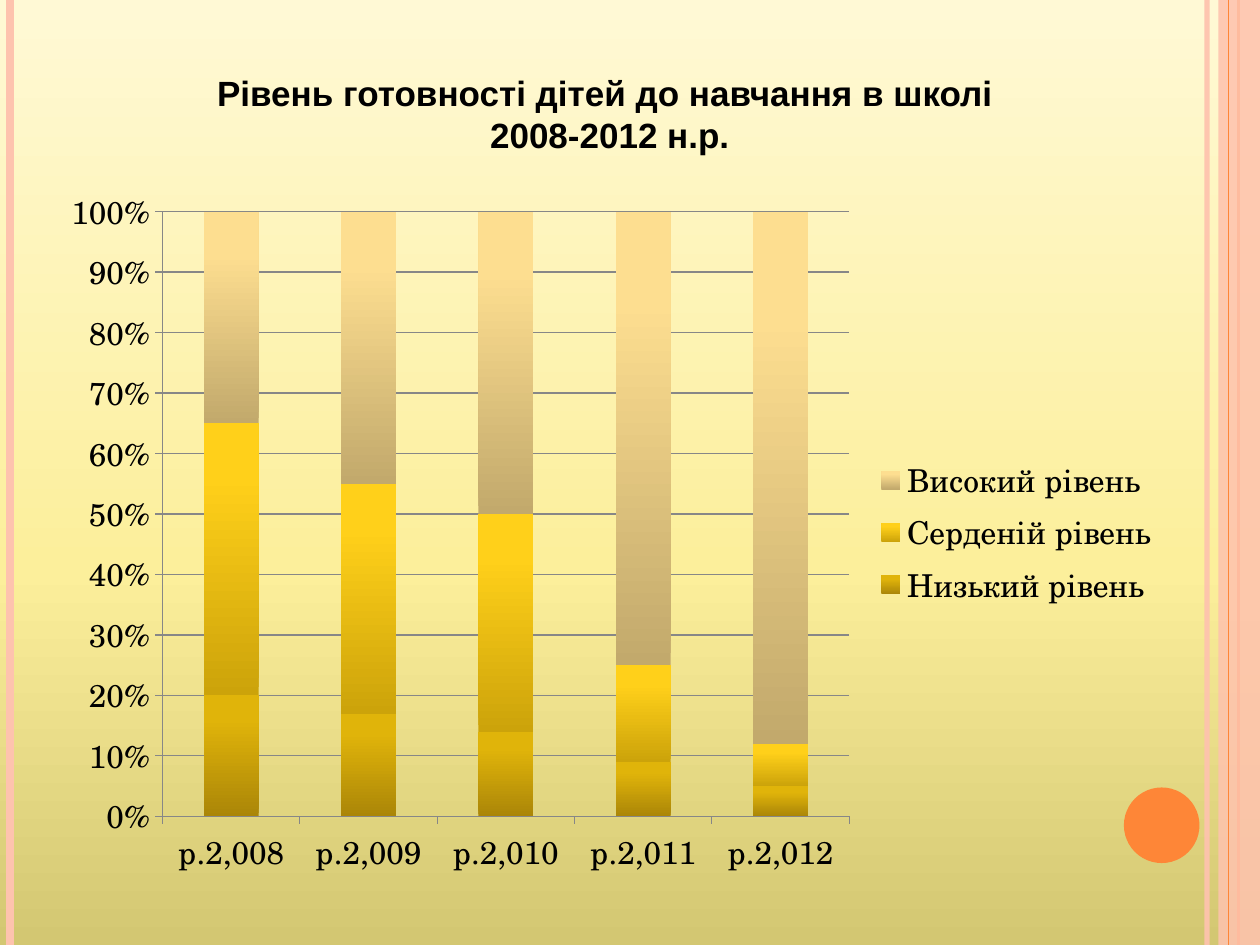
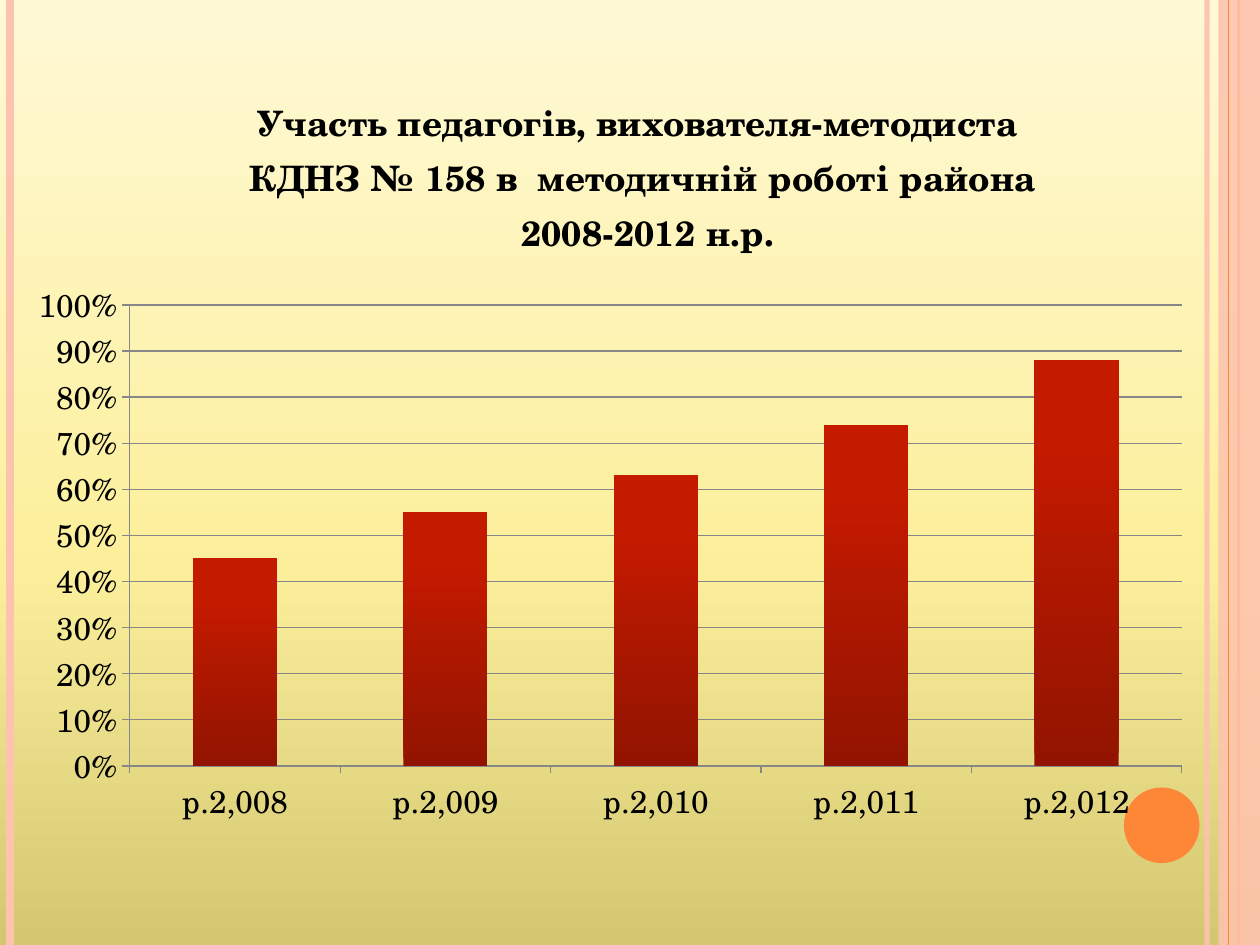
from copy import deepcopy
from pptx import Presentation
from pptx.chart.data import CategoryChartData as Data
from pptx.dml.color import RGBColor as RGB
from pptx.enum.chart import XL_CHART_TYPE as Kind, XL_LEGEND_POSITION as Side
from pptx.enum.chart import XL_TICK_MARK as Tick
from pptx.enum.shapes import MSO_CONNECTOR as Wire, MSO_SHAPE as Form
from pptx.enum.text import MSO_AUTO_SIZE as Auto, PP_ALIGN as Align
from pptx.oxml.ns import qn
from pptx.oxml.xmlchemy import OxmlElement as Node
from pptx.util import Inches, Pt

BLACK = RGB(0x00, 0x00, 0x00)
GREY = RGB(0x87, 0x87, 0x87)
PINK = RGB(0xFE, 0xC3, 0xAE)
ORANGE = RGB(0xFE, 0x86, 0x37)
SKY = [RGB(0xD3, 0xC7, 0x72), RGB(0xFC, 0xEF, 0x9B), RGB(0xFF, 0xF9, 0xD5)]
# Bar shades: bottom, top
LOW = RGB(0xAB, 0x86, 0x08), RGB(0xE0, 0xB4, 0x0A)
MID = RGB(0xCC, 0xA3, 0x0A), RGB(0xFF, 0xD0, 0x1A)
HIGH = RGB(0xC2, 0xA9, 0x6C), RGB(0xFD, 0xDE, 0x90)
RED = RGB(0x92, 0x14, 0x00), RGB(0xC4, 0x1A, 0x00)

SERIF, SANS = "TeX Gyre Schola", "Arial"
WIDTH, HEIGHT = 10, 7.5
YEARS = [f"р.2,{year:03}" for year in range(8, 13)]


def write(frame, lines, font=SERIF, size=20, bold=True, color=BLACK):
    """Fill a text frame with centred lines."""
    for i, line in enumerate(lines):
        para = frame.paragraphs[0] if i == 0 else frame.add_paragraph()
        para.alignment = Align.CENTER
        run = para.add_run()
        run.text = line
        style(run.font, font, size, bold, color)


def style(font, name=SERIF, size=18, bold=False, color=BLACK):
    font.name, font.size, font.bold = name, Pt(size), bold
    font.color.rgb = color


def blend(fill, colors, spots):
    """Colour a gradient that runs from bottom to top."""
    fill.gradient_angle = 90
    for stop, color, spot in zip(fill.gradient_stops, colors, spots):
        stop.color.rgb, stop.position = color, spot


def fade(color, share):
    """Set the opacity of a solid colour, in percent."""
    alpha = Node("a:alpha")
    alpha.set("val", str(share * 1000))
    color.append(alpha)


def rule(slide, x, color, width, share=100):
    line = slide.shapes.add_connector(
        Wire.STRAIGHT, Inches(x), 0, Inches(x), Inches(HEIGHT))
    line.line.color.rgb, line.line.width = color, Pt(width)
    props = line.element.spPr
    if share < 100:
        fade(next(props.iter(qn("a:srgbClr"))), share)
    props.append(Node("a:effectLst"))


def block(slide, form, box, color, share=100):
    shape = slide.shapes.add_shape(form, *map(Inches, box))
    shape.shadow.inherit = False
    shape.fill.solid()
    shape.fill.fore_color.rgb = color
    shape.line.fill.background()
    if share < 100:
        fade(next(shape.element.spPr.iter(qn("a:srgbClr"))), share)


def base(deck):
    """Add a slide with the shared backdrop, bands and dot."""
    slide = deck.slides.add_slide(deck.slide_layouts[6])
    fill = slide.background.fill
    fill.gradient()
    stops = next(slide.element.iter(qn("a:gsLst")))
    stops.append(deepcopy(stops[0]))
    blend(fill, SKY, (0, 0.4, 1))
    rule(slide, 9.58, PINK, 3, 93)
    rule(slide, 0.08, PINK, 4.5)
    rule(slide, 9.83, ORANGE, 1.5)
    block(slide, Form.RECTANGLE, (9.67, 0, 0.33, HEIGHT), PINK, 87)
    rule(slide, 9.75, ORANGE, 0.75)
    block(slide, Form.OVAL, (8.92, 6.25, 0.6, 0.6), ORANGE)
    return slide


def place(part, index, box, spot, inner=False):
    """Lay out a chart part; box and spot are on the slide, in inches."""
    for old in part.findall(qn("c:layout")):
        part.remove(old)
    layout, manual = Node("c:layout"), Node("c:manualLayout")
    layout.append(manual)
    x, y, w, h = box
    items = [("layoutTarget", "inner")] if inner else []
    items += [("xMode", "edge"), ("yMode", "edge"),
              ("x", (spot[0] - x) / w), ("y", (spot[1] - y) / h)]
    if inner:
        items += [("w", spot[2] / w), ("h", spot[3] / h)]
    for tag, val in items:
        node = Node(f"c:{tag}")
        node.set("val", str(val))
        manual.append(node)
    part.insert(index, layout)


def bars(slide, kind, box, plot, rows):
    """Add a column chart; rows hold name, values and shades."""
    data = Data(number_format="General")
    data.categories = YEARS
    for name, vals, _ in rows:
        data.add_series(name, vals)
    chart = slide.shapes.add_chart(kind, *map(Inches, box), data).chart
    style(chart.font)
    chart.has_title = chart.has_legend = False
    group = chart.plots[0]
    group.gap_width, group.vary_by_categories = 150, False
    for series, (_, _, shades) in zip(group.series, rows):
        fill = series.format.fill
        fill.gradient()
        blend(fill, shades, (0, 0.8))
    # Axes and grid
    cat, val = chart.category_axis, chart.value_axis
    val.has_major_gridlines = True
    val.minimum_scale, val.maximum_scale, val.major_unit = 0, 1, 0.1
    val.tick_labels.number_format = "0%"
    val.tick_labels.number_format_is_linked = False
    for axis in (cat, val):
        axis.major_tick_mark, axis.minor_tick_mark = Tick.OUTSIDE, Tick.NONE
    for part in (cat, val, val.major_gridlines):
        part.format.line.color.rgb = GREY
        part.format.line.width = Pt(0.75)
    place(next(chart.element.iter(qn("c:plotArea"))), 0, box, plot, True)
    return chart


def ready(deck):
    """School readiness by level."""
    slide = base(deck)
    chart = bars(
        slide, Kind.COLUMN_STACKED_100, (0.38, 1.39, 8.92, 5.67),
        (1.29, 1.68, 5.45, 4.8),
        [("Низький рівень", (20, 17, 14, 9, 5), LOW),
         ("Серденій рівень", (45, 38, 36, 16, 7), MID),
         ("Високий рівень", (35, 45, 50, 75, 88), HIGH)])
    chart.plots[0].overlap = 100
    chart.has_legend = True
    chart.legend.position = Side.RIGHT
    chart.legend.include_in_layout = False
    # Heading
    frame = slide.shapes.add_textbox(
        *map(Inches, (1.22, 0.52, 7.24, 0.77))).text_frame
    frame.word_wrap, frame.auto_size = True, Auto.SHAPE_TO_FIT_TEXT
    write(frame, ["Рівень готовності дітей до навчання в школі ",
                  "2008-2012 н.р."], font=SANS)


def share(deck):
    """Teachers' part in the district's work."""
    slide = base(deck)
    box = (0.12, 0.52, 9.45, 6.14)
    chart = bars(slide, Kind.COLUMN_CLUSTERED, box, (1.03, 2.42, 8.35, 3.66),
                 [("Series 1", (0.45, 0.55, 0.63, 0.74, 0.88), RED)])
    # Chart title
    chart.has_title = True
    title = chart.chart_title
    write(title.text_frame, ["Участь педагогів, вихователя-методиста ",
                             "КДНЗ № 158 в  методичній роботі района",
                             " 2008-2012 н.р."])
    title.include_in_layout = False
    place(title.element if hasattr(title, "element") else title._element,
          1, box, (1.95, 0.7))


def main():
    deck = Presentation()
    deck.slide_width, deck.slide_height = Inches(WIDTH), Inches(HEIGHT)
    ready(deck)
    share(deck)
    deck.save("out.pptx")


if __name__ == "__main__":
    main()
